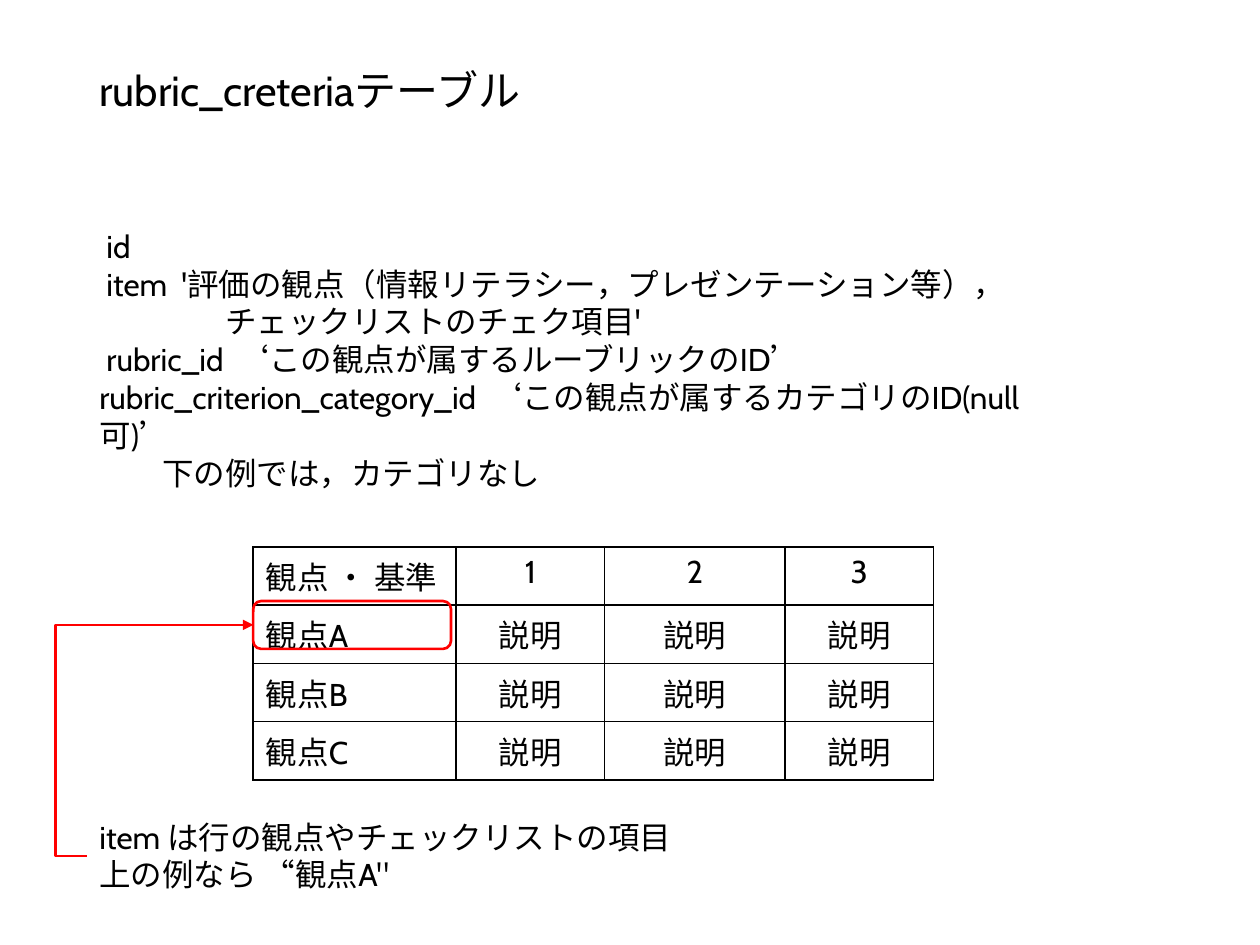
from pptx import Presentation
from pptx.dml.color import RGBColor
from pptx.enum.shapes import MSO_CONNECTOR as Link, MSO_SHAPE as Preset
from pptx.enum.text import MSO_ANCHOR as Anchor, PP_ALIGN as Align
from pptx.oxml import parse_xml
from pptx.oxml.ns import nsdecls
from pptx.util import Inches, Pt

COLORS = {"text": "000000", "grid": "000000", "mark": "FF0000"}
FONT = "Cabin"
WIDTH, HEIGHT = Inches(10), Inches(7.5)
COLS, ROWS = 100, 75

TITLE_BOX = (6.9, 4, 86.2, 6.8)
FIELDS_BOX = (6.9, 17.5, 78.5, 19.2)
RUBRIC_BOX = (20.1, 43.4, 54, 16.4)
ITEM_BOX = (20.1, 47.7, 15.7, 3.8)
NOTE_BOX = (6.9, 64.4, 47.8, 7.1)

FIELDS = [
    " id",
    " item  '評価の観点（情報リテラシー，プレゼンテーション等），",
    "\t\tチェックリストのチェク項目'",
    " rubric_id  ‘この観点が属するルーブリックのID’",
    "rubric_criterion_category_id  ‘この観点が属するカテゴリのID(null 可)’",
    "\t下の例では，カテゴリなし",
]
NOTE = ["item は行の観点やチェックリストの項目", "上の例なら “観点A\""]
RUBRIC = [["観点 ・ 基準", "1", "2", "3"]] + [
    [f"観点{letter}"] + ["説明"] * 3 for letter in "ABC"
]
RUBRIC_COLS = (16.1, 11.8, 14.3, 11.8)


def x(cols):
    return round(WIDTH * cols / COLS)


def y(rows):
    return round(HEIGHT * rows / ROWS)


def place(box):
    left, top, width, height = box
    return x(left), y(top), x(width), y(height)


def style_paragraph(paragraph, size, align=Align.LEFT):
    paragraph.alignment = align
    for run in paragraph.runs:
        run.font.name = FONT
        run.font.size = Pt(size)
        run.font.color.rgb = RGBColor.from_string(COLORS["text"])


def add_lines(slide, box, lines, size=18, anchor=Anchor.TOP, spacing=None):
    frame = slide.shapes.add_textbox(*place(box)).text_frame
    frame.word_wrap = True
    frame.vertical_anchor = anchor
    frame.text = "\n".join(lines)
    for paragraph in frame.paragraphs:
        style_paragraph(paragraph, size)
        paragraph.line_spacing = spacing
        paragraph._p.get_or_add_pPr().set("defTabSz", str(Inches(0.5)))


def add_borders(cell):
    properties = cell._tc.get_or_add_tcPr()
    for position, side in enumerate(("lnL", "lnR", "lnT", "lnB")):
        properties.insert(position, parse_xml(
            f'<a:{side} {nsdecls("a")} w="{Pt(1)}"><a:solidFill>'
            f'<a:srgbClr val="{COLORS["grid"]}"/></a:solidFill></a:{side}>'))


def add_rubric(slide, box):
    rubric = slide.shapes.add_table(len(RUBRIC), len(RUBRIC_COLS), *place(box)).table
    rubric.first_row = rubric.horz_banding = False
    for column, width in zip(rubric.columns, RUBRIC_COLS):
        column.width = x(width)
    for r, row in enumerate(RUBRIC):
        for c, words in enumerate(row):
            cell = rubric.cell(r, c)
            cell.text_frame.text = words
            style_paragraph(cell.text_frame.paragraphs[0], 18,
                            Align.CENTER if c else Align.LEFT)
            cell.fill.background()
            add_borders(cell)


def draw_mark_line(line):
    line.color.rgb = RGBColor.from_string(COLORS["mark"])
    line.width = Pt(1.5)


def add_item_frame(slide, box):
    frame = slide.shapes.add_shape(Preset.ROUNDED_RECTANGLE, *place(box))
    frame.shadow.inherit = False
    frame.fill.background()
    draw_mark_line(frame.line)


def add_item_arrow(slide, note_box, item_box):
    start_x, start_y = note_box[0], note_box[1] + note_box[3] / 2
    end_x, end_y = item_box[0], item_box[1] + item_box[3] / 2
    arrow = slide.shapes.add_connector(
        Link.ELBOW, x(start_x), y(start_y), x(end_x), y(end_y))
    draw_mark_line(arrow.line)
    outset = round(-2.5 / (end_x - start_x) * 100000)
    properties = arrow._element.spPr
    properties.prstGeom.get_or_add_avLst().append(parse_xml(
        f'<a:gd {nsdecls("a")} name="adj1" fmla="val {outset}"/>'))
    arrow.line._get_or_add_ln().append(
        parse_xml(f'<a:tailEnd {nsdecls("a")} type="triangle"/>'))
    properties.append(parse_xml(f'<a:effectLst {nsdecls("a")}/>'))


def main():
    deck = Presentation()
    deck.slide_width, deck.slide_height = WIDTH, HEIGHT
    slide = deck.slides.add_slide(deck.slide_layouts[6])
    add_rubric(slide, RUBRIC_BOX)
    add_lines(slide, TITLE_BOX, ["rubric_creteriaテーブル"], 24, Anchor.MIDDLE, 0.9)
    add_lines(slide, FIELDS_BOX, FIELDS)
    add_item_frame(slide, ITEM_BOX)
    add_lines(slide, NOTE_BOX, NOTE)
    add_item_arrow(slide, NOTE_BOX, ITEM_BOX)
    deck.save("out.pptx")


if __name__ == "__main__":
    main()
